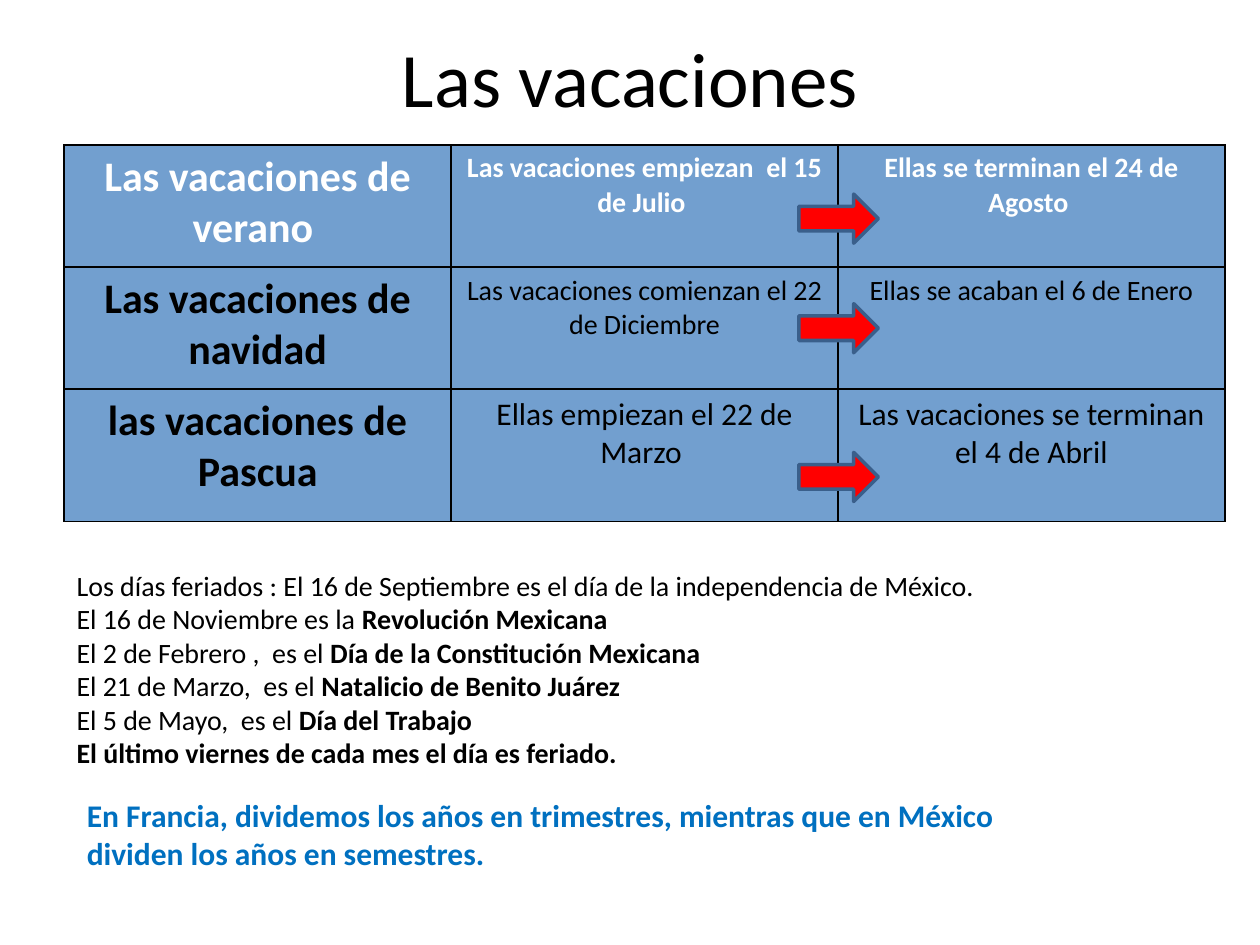
from lxml.etree import SubElement
from pptx import Presentation
from pptx.dml.color import RGBColor
from pptx.enum.shapes import MSO_SHAPE
from pptx.enum.text import MSO_ANCHOR, PP_ALIGN
from pptx.oxml.ns import qn
from pptx.util import Pt

FONT = "Calibri"
BLACK, WHITE, RED = "000000", "FFFFFF", "FF0000"
CELL_BLUE, ARROW_EDGE, NOTE_BLUE = "729FCF", "3A5F8B", "0070C0"

TABLE_LEFT, TABLE_TOP, COLUMN_WIDTH = 36.72, 82.8, 221.1
ROW_HEIGHTS = [69.8, 69.8, 75.6]
VACATIONS = [
    ["Las vacaciones de verano ", "Las vacaciones empiezan  el 15 de Julio ",
     "Ellas se terminan el 24 de Agosto "],
    ["Las vacaciones de navidad", "Las vacaciones comienzan el 22 de Diciembre",
     "Ellas se acaban el 6 de Enero"],
    ["las vacaciones de Pascua", "Ellas empiezan el 22 de Marzo ",
     "Las vacaciones se terminan el 4 de Abril"],
]
DATE_SIZES = [16, 16, 18]
ARROW_TOPS = [110.9, 173.5, 258.5]

# Each line is a plain part followed by a bold part.
HOLIDAYS = [
    ("Los días feriados : El 16 de Septiembre es el día de la independencia de México.", ""),
    ("El 16 de Noviembre es la ", "Revolución Mexicana"),
    ("El 2 de Febrero ,  es el ", "Día de la Constitución Mexicana"),
    ("El 21 de Marzo,  es el ", "Natalicio de Benito Juárez"),
    ("El 5 de Mayo,  es el ", "Día del Trabajo"),
    ("", "El último viernes de cada mes el día es feriado."),
]
SEMESTERS = [("", "En Francia, dividemos los años en trimestres, mientras que en México "
              "dividen los años en semestres.")]


def color(hex_code):
    return RGBColor.from_string(hex_code)


def style_font(paragraph, size, hex_code, bold=None):
    font = paragraph.font
    font.name, font.size, font.bold = FONT, Pt(size), bold
    font.color.rgb = color(hex_code)


def set_title(page, text):
    title = page.shapes.title
    title.left, title.top, title.width, title.height = Pt(36), Pt(21.6), Pt(648), Pt(43.9)
    frame = title.text_frame
    frame.text = text
    frame.vertical_anchor = MSO_ANCHOR.MIDDLE
    paragraph = frame.paragraphs[0]
    paragraph.alignment = PP_ALIGN.CENTER
    style_font(paragraph, 44, BLACK)


def add_cell_borders(cell):
    properties = cell._tc.get_or_add_tcPr()
    for side in ("a:lnL", "a:lnR", "a:lnT", "a:lnB"):
        line = SubElement(properties, qn(side), w=str(Pt(1)))
        fill = SubElement(line, qn("a:solidFill"))
        SubElement(fill, qn("a:srgbClr"), val=BLACK)


def fill_cell(cell, text, size, hex_code, bold):
    add_cell_borders(cell)
    cell.fill.solid()
    cell.fill.fore_color.rgb = color(CELL_BLUE)
    cell.text = text
    paragraph = cell.text_frame.paragraphs[0]
    paragraph.alignment = PP_ALIGN.CENTER
    style_font(paragraph, size, hex_code, bold)


def add_vacation_table(page):
    frame = page.shapes.add_table(3, 3, Pt(TABLE_LEFT), Pt(TABLE_TOP),
                                  Pt(3 * COLUMN_WIDTH), Pt(sum(ROW_HEIGHTS)))
    table = frame.table
    table.horz_banding = False
    for column in table.columns:
        column.width = Pt(COLUMN_WIDTH)
    for row_number, texts in enumerate(VACATIONS):
        is_header = row_number == 0
        table.rows[row_number].height = Pt(ROW_HEIGHTS[row_number])
        for column_number, text in enumerate(texts):
            is_name = column_number == 0
            fill_cell(table.cell(row_number, column_number), text,
                      24 if is_name else DATE_SIZES[row_number],
                      WHITE if is_header else BLACK, is_header or is_name)


def add_arrow(page, top):
    arrow = page.shapes.add_shape(MSO_SHAPE.RIGHT_ARROW, Pt(456.5), Pt(top), Pt(45.4), Pt(28.1))
    arrow.shadow.inherit = False
    arrow.fill.solid()
    arrow.fill.fore_color.rgb = color(RED)
    arrow.line.color.rgb = color(ARROW_EDGE)
    arrow.line.width = Pt(2)


def add_text(page, left, top, width, height, lines, size, hex_code):
    box = page.shapes.add_textbox(Pt(left), Pt(top), Pt(width), Pt(height))
    frame = box.text_frame
    frame.word_wrap = True
    for number, (plain, strong) in enumerate(lines):
        paragraph = frame.add_paragraph() if number else frame.paragraphs[0]
        style_font(paragraph, size, hex_code)
        for text, bold in ((plain, False), (strong, True)):
            if text:
                span = paragraph.add_run()
                span.text = text
                span.font.bold = bold


def main():
    deck = Presentation()
    deck.slide_width, deck.slide_height = Pt(720), Pt(540)
    page = deck.slides.add_slide(deck.slide_layouts.get_by_name("Title Only"))
    set_title(page, "Las vacaciones")
    add_vacation_table(page)
    for top in ARROW_TOPS:
        add_arrow(page, top)
    add_text(page, 36.72, 321.1, 669.6, 141.1, HOLIDAYS, 16, BLACK)
    add_text(page, 42.5, 451.4, 555.8, 50.4, SEMESTERS, 18, NOTE_BLUE)
    deck.save("out.pptx")


if __name__ == "__main__":
    main()
